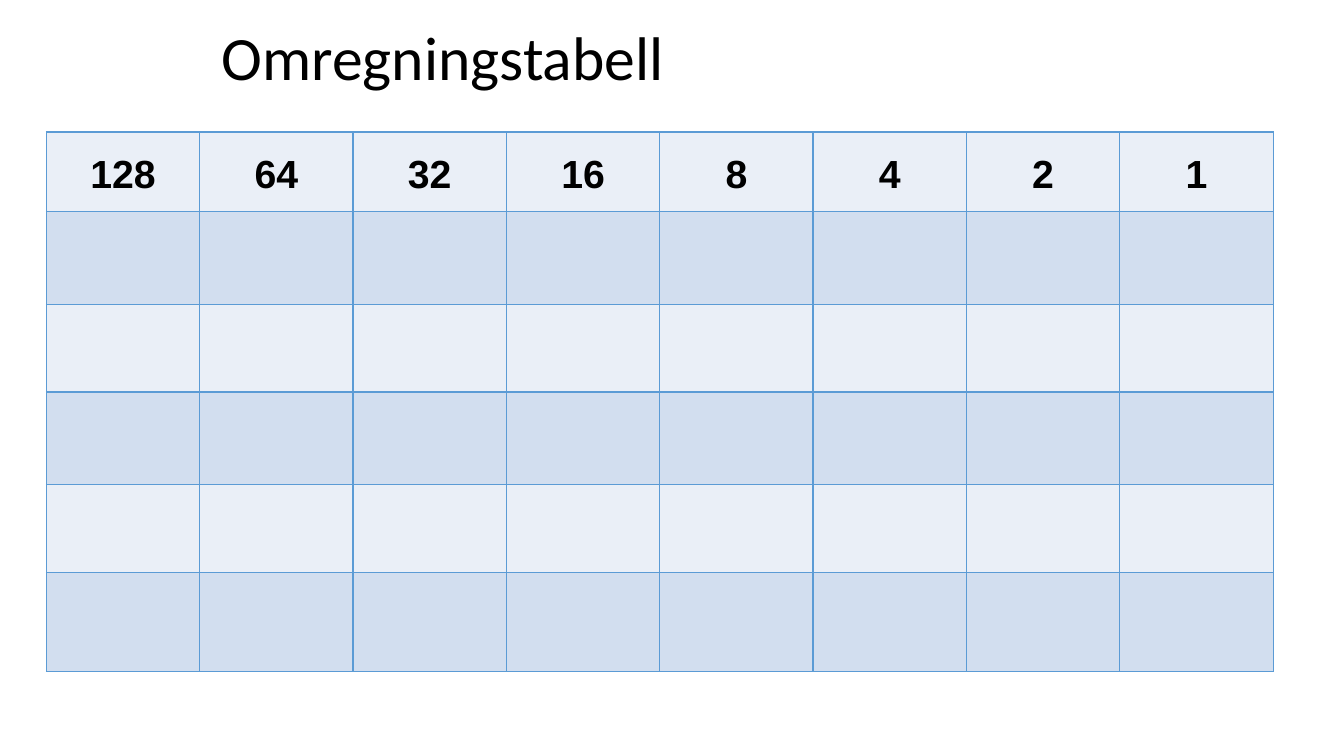
import lxml.etree
import pptx
import pptx.dml.color
import pptx.enum.text
import pptx.oxml.ns
import pptx.util

Inches = pptx.util.Inches
Pt = pptx.util.Pt
RGBColor = pptx.dml.color.RGBColor
ALIGN = pptx.enum.text.PP_ALIGN
MIDDLE = pptx.enum.text.MSO_ANCHOR.MIDDLE

BLACK = RGBColor(0x00, 0x00, 0x00)
BLUE = RGBColor(0x5B, 0x9B, 0xD5)
LIGHT = RGBColor(0xEA, 0xEF, 0xF7)
DARK = RGBColor(0xD2, 0xDE, 0xEF)

BITS = 8
ROWS = [0.79, 0.92, 0.87, 0.92, 0.87, 0.98]


def write(frame, text, font, size, bold=False, align=ALIGN.LEFT, space=1.0):
    para = frame.paragraphs[0]
    para.alignment = align
    para.line_spacing = space
    run = para.add_run()
    run.text = text
    run.font.name = font
    run.font.size = Pt(size)
    run.font.bold = bold
    run.font.color.rgb = BLACK


def border(cell):
    props = cell._tc.get_or_add_tcPr()
    name = pptx.oxml.ns.qn
    for side in ("lnL", "lnR", "lnT", "lnB"):
        line = lxml.etree.SubElement(props, name("a:" + side), w=str(Pt(1)))
        fill = lxml.etree.SubElement(line, name("a:solidFill"))
        lxml.etree.SubElement(fill, name("a:srgbClr"), val=str(BLUE))


def title(slide, left, top, width, height):
    box = slide.shapes.add_textbox(
        Inches(left), Inches(top), Inches(width), Inches(height))
    frame = box.text_frame
    frame.word_wrap = True
    frame.vertical_anchor = MIDDLE
    write(frame, "Omregningstabell", "Calibri", 44, space=0.9)


def table(slide, left, top, width, height):
    grid = slide.shapes.add_table(
        len(ROWS), BITS, Inches(left), Inches(top),
        Inches(width), Inches(height)).table
    for col in grid.columns:
        col.width = Inches(width / BITS)
    for index, tall in enumerate(ROWS):
        grid.rows[index].height = Inches(tall)
        for bit in range(BITS):
            cell = grid.cell(index, bit)
            border(cell)
            cell.fill.solid()
            cell.fill.fore_color.rgb = DARK if index % 2 else LIGHT
            cell.vertical_anchor = MIDDLE
            cell.margin_left = cell.margin_right = Inches(0.07)
            cell.margin_top = cell.margin_bottom = 0
            if index == 0:
                write(cell.text_frame, str(2 ** (BITS - 1 - bit)), "Arial", 28,
                      bold=True, align=ALIGN.CENTER, space=1.15)


def main():
    deck = pptx.Presentation()
    deck.slide_width = Inches(13.33)
    deck.slide_height = Inches(7.5)
    slide = deck.slides.add_slide(deck.slide_layouts[6])
    title(slide, 2.1, 0.13, 9, 0.94)
    table(slide, 0.46, 1.31, 12.17, sum(ROWS))
    deck.save("out.pptx")


if __name__ == "__main__":
    main()
